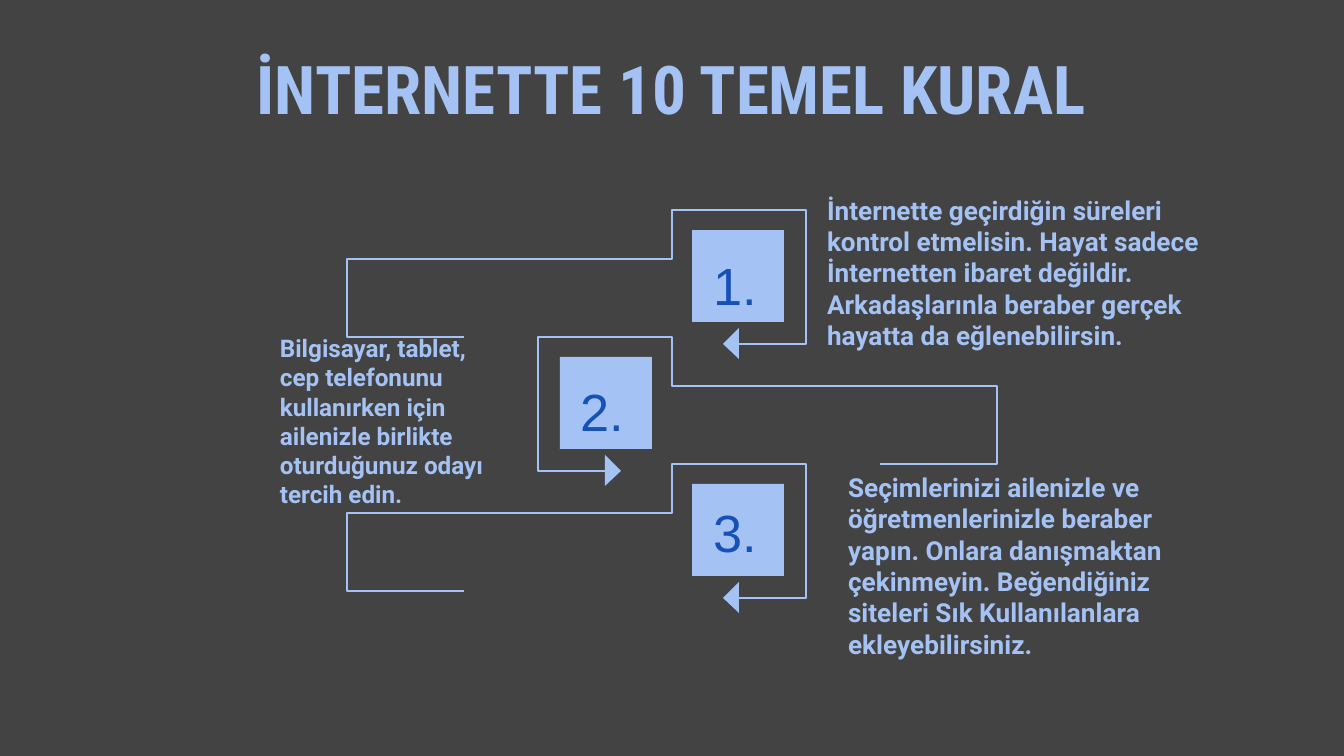
from pptx import Presentation
from pptx.dml.color import RGBColor
from pptx.enum.shapes import MSO_SHAPE
from pptx.enum.text import MSO_ANCHOR, PP_ALIGN
from pptx.util import Pt

BACKGROUND, LIGHT_BLUE, DARK_BLUE = "434343", "A4C2F4", "1652B6"
WIDTH, HEIGHT = 1344, 756
EMU_PER_PIXEL = 914400 / 134.4

TITLE = "İNTERNETTE 10 TEMEL KURAL"
RULES = [
    {"number": "1.", "number_box": (700, 246, 77, 77), "size": 14,
     "box": (814, 212, 390, 118), "insets": (13, 3, 0, 0),
     "text": "İnternette geçirdiğin süreleri kontrol etmelisin. Hayat sadece "
             "İnternetten ibaret değildir. Arkadaşlarınla beraber gerçek "
             "hayatta da eğlenebilirsin."},
    {"number": "2.", "number_box": (567, 372, 77, 77), "size": 13,
     "box": (253, 368, 258, 103), "insets": (27, 3, 13, 0),
     "text": "Bilgisayar, tablet, cep telefonunu kullanırken için ailenizle "
             "birlikte oturduğunuz odayı tercih edin."},
    {"number": "3.", "number_box": (700, 493, 77, 77), "size": 14,
     "box": (835, 496, 370, 136), "insets": (13, 3, 0, 0),
     "text": "Seçimlerinizi ailenizle ve öğretmenlerinizle beraber yapın. "
             "Onlara danışmaktan çekinmeyin. Beğendiğiniz siteleri Sık "
             "Kullanılanlara ekleyebilirsiniz."},
]

# Offsets from the slide's centre line and the top of each step
FIRST_TOP, STEP_HEIGHT = 210, 127
TRACK = [(-208, 127), (-325, 127), (-325, 49), (0, 49),
         (0, 0), (134, 0), (134, 134), (66, 134)]
ARROWHEAD = [(67, 118), (51, 134), (67, 149)]
SQUARE_OFFSET, SQUARE_SIZE = 20, 92


def px(value):
    return round(value * EMU_PER_PIXEL)


def color(hex_value):
    return RGBColor.from_string(hex_value)


def fill_plain(shape):
    shape.shadow.inherit = False
    shape.fill.solid()
    shape.fill.fore_color.rgb = color(LIGHT_BLUE)
    shape.line.fill.background()


def add_text(slide, text, box, font, size, hex_value, bold=False,
             insets=(13, 7, 13, 7), anchor=MSO_ANCHOR.TOP,
             align=PP_ALIGN.LEFT, space_before=0):
    frame = slide.shapes.add_textbox(*map(px, box)).text_frame
    frame.word_wrap = True
    frame.vertical_anchor = anchor
    (frame.margin_left, frame.margin_top,
     frame.margin_right, frame.margin_bottom) = map(px, insets)
    paragraph = frame.paragraphs[0]
    paragraph.alignment = align
    paragraph.space_before = Pt(space_before)
    run = paragraph.add_run()
    run.text = text
    run.font.name, run.font.size, run.font.bold = font, Pt(size), bold
    run.font.color.rgb = color(hex_value)


def add_outline(slide, offsets, side, top, close):
    """Draw offsets around the centre line; side -1 mirrors them."""
    points = [(px(WIDTH // 2 + side * x), px(top + y)) for x, y in offsets]
    builder = slide.shapes.build_freeform(*points[0], scale=1.0)
    builder.add_line_segments(points[1:], close=close)
    return builder.convert_to_shape()


def add_step(slide, index):
    side = 1 if index % 2 == 0 else -1
    top = FIRST_TOP + index * STEP_HEIGHT

    track = add_outline(slide, TRACK, side, top, close=False)
    track.shadow.inherit = False
    track.fill.background()
    track.line.color.rgb = color(LIGHT_BLUE)
    track.line.width = Pt(1)

    fill_plain(add_outline(slide, ARROWHEAD, side, top, close=True))

    near_edge = WIDTH // 2 + side * SQUARE_OFFSET
    left = near_edge if side > 0 else near_edge - SQUARE_SIZE
    fill_plain(slide.shapes.add_shape(
        MSO_SHAPE.RECTANGLE, px(left), px(top + SQUARE_OFFSET),
        px(SQUARE_SIZE), px(SQUARE_SIZE)))


def main():
    presentation = Presentation()
    presentation.slide_width, presentation.slide_height = px(WIDTH), px(HEIGHT)
    slide = presentation.slides.add_slide(presentation.slide_layouts[6])
    slide.background.fill.solid()
    slide.background.fill.fore_color.rgb = color(BACKGROUND)

    add_text(slide, TITLE, (103, 50, 1137, 78), "Roboto Condensed", 36,
             LIGHT_BLUE, bold=True, insets=(0, 0, 0, 0),
             anchor=MSO_ANCHOR.BOTTOM, align=PP_ALIGN.CENTER)
    for index, rule in enumerate(RULES):
        add_step(slide, index)
        add_text(slide, rule["text"], rule["box"], "Roboto", rule["size"],
                 LIGHT_BLUE, bold=True, insets=rule["insets"],
                 anchor=MSO_ANCHOR.MIDDLE, space_before=1)
        add_text(slide, rule["number"], rule["number_box"], "Arial", 28,
                 DARK_BLUE)
    presentation.save("out.pptx")


if __name__ == "__main__":
    main()
